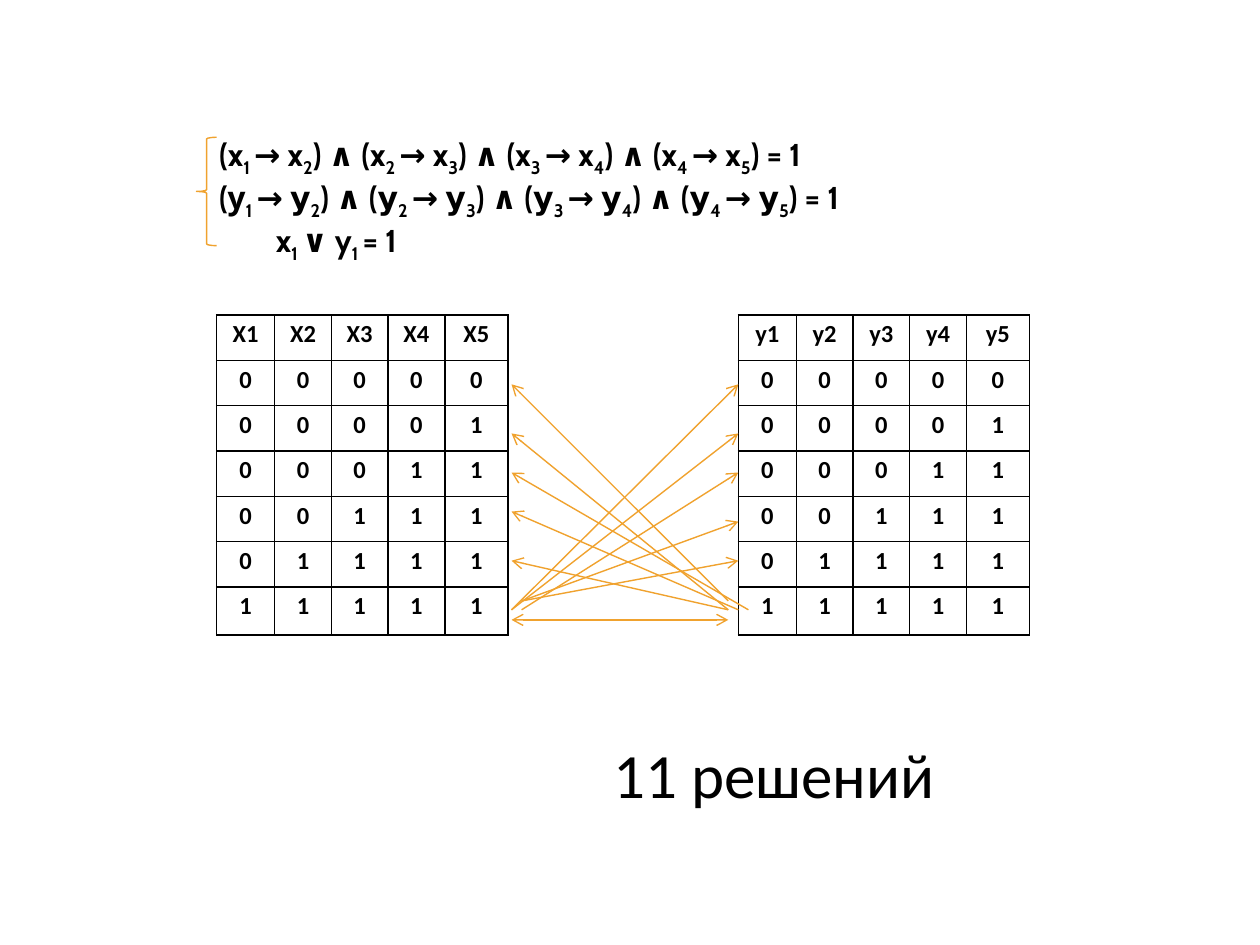
from lxml.etree import SubElement
from pptx import Presentation
from pptx.dml.color import RGBColor
from pptx.enum.shapes import MSO_CONNECTOR, MSO_SHAPE
from pptx.enum.text import MSO_ANCHOR, PP_ALIGN
from pptx.oxml import parse_xml
from pptx.oxml.ns import nsdecls, qn
from pptx.util import Inches, Pt

BLACK, WHITE, ORANGE = "000000", "FFFFFF", "F0A22E"
N = 5


def chain(v):
    """Implications v1 → v2, v2 → v3, ... joined by conjunctions; _ marks a subscript."""
    return " ∧ ".join(f"({v}_{i} → {v}_{i + 1})" for i in range(1, N)) + " = 1"


# formula, indent in inches
EQUATIONS = [(chain("x"), 0.39), (chain("у"), 0.39), ("x_1 ∨ y_1 = 1", 0.84)]
ANSWER = "11 решений"

# variable letter, left edge in inches
TABLES = [("X", 1.72), ("y", 5.86)]
TABLE_TOP = 2.5
COL_WIDTHS = [0.46, 0.45, 0.45, 0.45, 0.5]
ROW_HEIGHTS = [0.36] * 6 + [0.38]

# start x, start y, end y
X_EDGE, Y_EDGE = 4.06, 5.86
TO_Y_TABLE = [(4.06, 4.84, 3.05), (4.06, 4.84, 3.44), (4.14, 4.84, 3.75),
              (4.14, 4.77, 4.14), (4.14, 4.77, 4.45)]
TO_X_TABLE = [(5.78, 4.77, 3.05), (5.78, 4.84, 3.44), (5.94, 4.84, 3.75),
              (5.86, 4.84, 4.06), (5.78, 4.84, 4.45)]
LAST_ROW_Y = 4.92


def rgb(color):
    return RGBColor.from_string(color)


def style(r, size, font, bold=False):
    r.font.size, r.font.name, r.font.bold = Pt(size), font, bold
    r.font.color.rgb = rgb(BLACK)


def outline(shape):
    shape.line.color.rgb = rgb(ORANGE)
    shape.line.width = Pt(0.79)


def text_box(s, *box):
    tf = s.shapes.add_textbox(*map(Inches, box)).text_frame
    tf.word_wrap = True
    return tf


def add_formula(p, formula, indent):
    p._p.get_or_add_pPr().set("marL", str(Inches(indent)))
    first, *pieces = formula.split("_")
    runs = [(first, False)]
    for piece in pieces:
        cut = 2 if piece[1] == " " else 1
        runs += [(piece[:cut], True), (piece[cut:], False)]
    for text, subscript in runs:
        r = p.add_run()
        r.text = text
        style(r, 18, "Cabin", bold=True)
        if subscript:
            r.font._element.set("baseline", "-25000")


def format_cell(cell):
    cell.margin_left = cell.margin_right = Inches(0.07)
    cell.margin_top = cell.margin_bottom = 0
    cell.fill.solid()
    cell.fill.fore_color.rgb = rgb(WHITE)
    p = cell.text_frame.paragraphs[0]
    p.alignment, p.line_spacing = PP_ALIGN.CENTER, 1.15
    style(p.runs[0], 14, "Calibri", bold=True)
    tcPr = cell._tc.get_or_add_tcPr()
    for i, side in enumerate("LRTB"):
        tcPr.insert(i, parse_xml(
            f'<a:ln{side} {nsdecls("a")} w="{Pt(1)}"><a:solidFill>'
            f'<a:srgbClr val="{BLACK}"/></a:solidFill></a:ln{side}>'))


def add_truth_table(s, letter, left):
    rows = [[f"{letter}{i}" for i in range(1, N + 1)]]
    rows += [list("0" * (N - ones) + "1" * ones) for ones in range(N + 1)]
    table = s.shapes.add_table(
        len(rows), N, Inches(left), Inches(TABLE_TOP),
        Inches(sum(COL_WIDTHS)), Inches(sum(ROW_HEIGHTS))).table
    for col, width in zip(table.columns, COL_WIDTHS):
        col.width = Inches(width)
    for row, height, values in zip(table.rows, ROW_HEIGHTS, rows):
        row.height = Inches(height)
        for cell, value in zip(row.cells, values):
            cell.text_frame.text = value
            format_cell(cell)


def add_arrow(s, x1, y1, x2, y2, ends=("tailEnd",)):
    line = s.shapes.add_connector(MSO_CONNECTOR.STRAIGHT,
                                  *map(Inches, (x1, y1, x2, y2)))
    outline(line)
    for end in ends:
        SubElement(line.line._get_or_add_ln(), qn(f"a:{end}"), type="arrow")
    SubElement(line._element.spPr, qn("a:effectLst"))


def main():
    prs = Presentation()
    prs.slide_width, prs.slide_height = Inches(10), Inches(7.5)
    s = prs.slides.add_slide(prs.slide_layouts[6])

    for letter, left in TABLES:
        add_truth_table(s, letter, left)

    tf = text_box(s, 1.25, 1.02, 7.58, 1.01)
    for i, (formula, indent) in enumerate(EQUATIONS):
        p = tf.add_paragraph() if i else tf.paragraphs[0]
        add_formula(p, formula, indent)

    brace = s.shapes.add_shape(MSO_SHAPE.LEFT_BRACE,
                               *map(Inches, (1.56, 1.09, 0.16, 0.86)))
    brace.shadow.inherit = False
    brace.fill.background()
    outline(brace)

    for edge, arrows in ((Y_EDGE, TO_Y_TABLE), (X_EDGE, TO_X_TABLE)):
        for x, y, end_y in arrows:
            add_arrow(s, x, y, edge, end_y)
    add_arrow(s, X_EDGE, LAST_ROW_Y, 5.78, LAST_ROW_Y, ("headEnd", "tailEnd"))

    tf = text_box(s, 4.77, 5.78, 3.67, 0.71)
    tf.vertical_anchor = MSO_ANCHOR.MIDDLE
    tf.text = ANSWER
    style(tf.paragraphs[0].runs[0], 36, "Calibri")

    prs.save("out.pptx")


if __name__ == "__main__":
    main()
